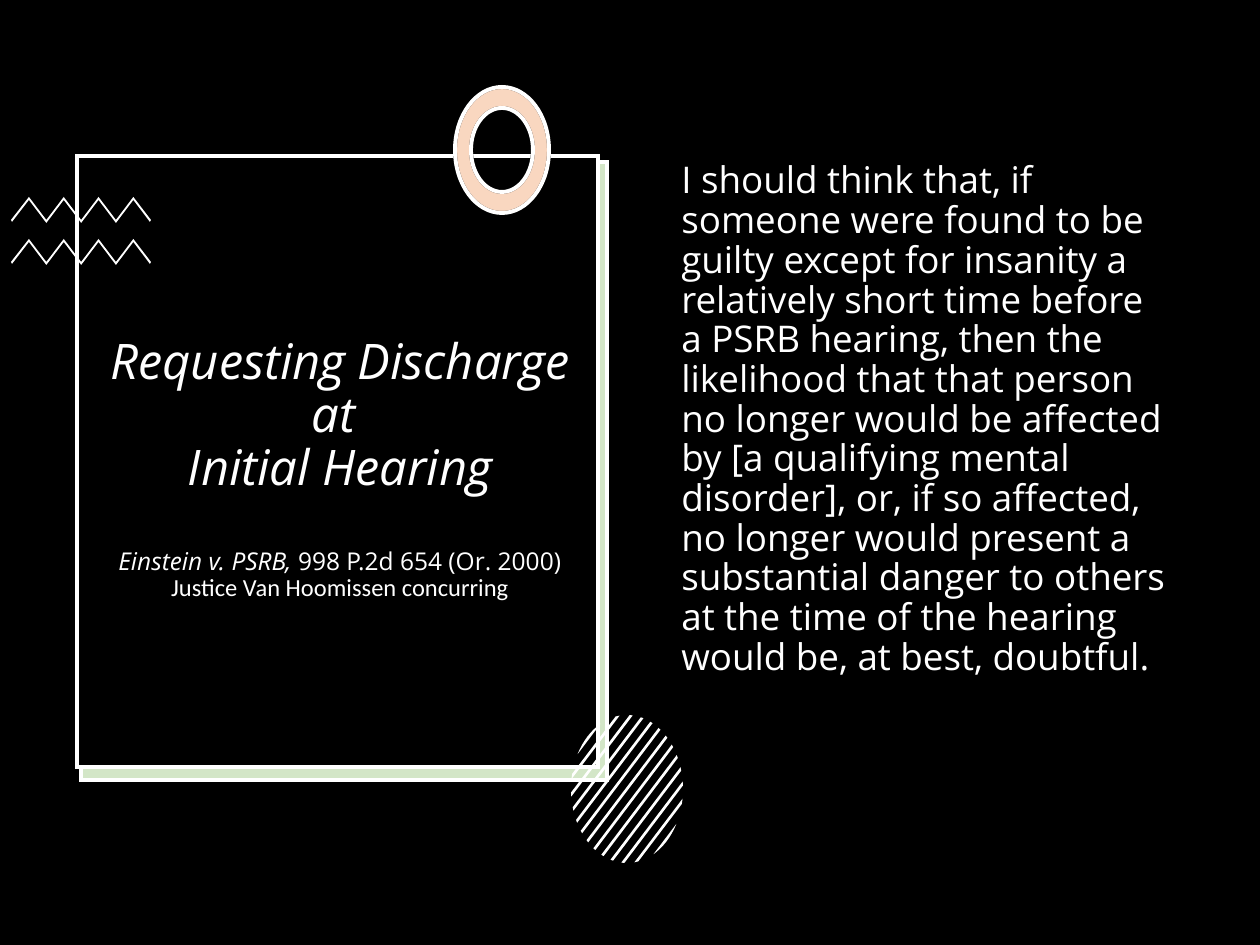
import math
from copy import deepcopy
from dataclasses import dataclass

from lxml import etree
from pptx import Presentation
from pptx.dml.color import RGBColor
from pptx.enum.shapes import MSO_SHAPE
from pptx.enum.text import MSO_ANCHOR, MSO_AUTO_SIZE, PP_ALIGN
from pptx.oxml.ns import qn
from pptx.util import Pt

RECTANGLE = MSO_SHAPE.RECTANGLE
CENTER, LEFT = PP_ALIGN.CENTER, PP_ALIGN.LEFT
MIDDLE, TOP = MSO_ANCHOR.MIDDLE, MSO_ANCHOR.TOP
NO_FIT = MSO_AUTO_SIZE.NONE
TITLE_ONLY = 5
EMU_PER_PX = 914400 / 126


@dataclass(frozen=True)
class Theme:
    black: str = "000000"
    white: str = "FFFFFF"
    green: str = "70AD47"
    orange: str = "ED7D31"
    tint: int = 30
    outline: float = 2.25
    font: str = "Open Sans"
    credit_font: str = "Calibri"
    title_size: int = 28
    citation_size: int = 14
    body_size: int = 21
    line_spacing: float = 0.9


THEME = Theme()

TITLE = (
    ("Requesting Discharge at \nInitial Hearing\n\n", {"italic": True}),
    ("Einstein v. PSRB, ", {"italic": True, "size": THEME.citation_size}),
    ("998 P.2d 654 (Or. 2000)\n", {"size": THEME.citation_size}),
    ("Justice Van Hoomissen concurring",
     {"size": THEME.citation_size, "font": THEME.credit_font}),
)
QUOTE = (
    "I should think that, if someone were found to be guilty except for insanity "
    "a relatively short time before a PSRB hearing, then the likelihood that that "
    "person no longer would be affected by [a qualifying mental disorder], or, if "
    "so affected, no longer would present a substantial danger to others at the "
    "time of the hearing would be, at best, doubtful."
)


def px(value):
    return round(value * EMU_PER_PX)


def paint(shape, fill, line=None, opacity=100):
    shape.shadow.inherit = False
    shape.fill.solid()
    shape.fill.fore_color.rgb = RGBColor.from_string(fill)
    if opacity < 100:
        color = shape.element.spPr.find(qn("a:solidFill"))[0]
        etree.SubElement(color, qn("a:alpha"), val=str(opacity * 1000))
    if line:
        shape.line.color.rgb = RGBColor.from_string(line)
        shape.line.width = Pt(THEME.outline)
        etree.SubElement(shape.element.spPr.find(qn("a:ln")), qn("a:miter"), lim="800000")
    else:
        shape.line.fill.background()


def add_rectangle(slide, box, fill, **style):
    shape = slide.shapes.add_shape(RECTANGLE, *map(px, box))
    paint(shape, fill, **style)


def bend_segments(shape):
    segments = list(shape.element.iter(qn("a:lnTo")))
    for start in range(0, len(segments), 3):
        curve = etree.Element(qn("a:cubicBezTo"))
        segments[start].addprevious(curve)
        for segment in segments[start:start + 3]:
            curve.append(segment[0])
            segment.getparent().remove(segment)


def add_outline(slide, contours, fill, curved=False, **style):
    scaled = [[(px(x), px(y)) for x, y in contour] for contour in contours]
    builder = slide.shapes.build_freeform(*scaled[0][0])
    builder.add_line_segments(scaled[0][1:])
    for contour in scaled[1:]:
        builder.move_to(*contour[0])
        builder.add_line_segments(contour[1:])
    shape = builder.convert_to_shape()
    if curved:
        bend_segments(shape)
    paint(shape, fill, **style)


def add_zigzag(slide, left, top):
    tips = [(left + 18 + 17.4 * i, top + 23 * (i % 2)) for i in range(7)]
    upper = [(left, top + 23), *tips, (left + 140, top + 23)]
    lower = [(x, y + 3) for x, y in reversed(tips)]
    add_outline(slide, [[*upper, (left + 139, top + 25), *lower, (left + 1, top + 25)]],
                THEME.white)


def arc_points(center, radii, start, sweep):
    end, handle = start + sweep, 4 / 3 * math.tan(sweep / 4)
    unit = [
        (math.cos(start), math.sin(start)),
        (math.cos(start) - handle * math.sin(start),
         math.sin(start) + handle * math.cos(start)),
        (math.cos(end) + handle * math.sin(end),
         math.sin(end) - handle * math.cos(end)),
        (math.cos(end), math.sin(end)),
    ]
    return [(center[0] + radii[0] * x, center[1] + radii[1] * y) for x, y in unit]


def ellipse_points(center, radii):
    quarter = math.pi / 2
    arcs = [arc_points(center, radii, i * quarter, quarter) for i in range(4)]
    return arcs[0][:1] + [point for arc in arcs for point in arc[1:]]


def add_ring(slide, center, outer, inner, fill, **style):
    contours = [ellipse_points(center, radii) for radii in (outer, inner)]
    add_outline(slide, contours, fill, curved=True, **style)


def add_striped_ellipse(slide, center, radii, count=13, pitch=0.163, half_width=0.021):
    def on_edge(offset, side):
        reach = side * math.sqrt(1 - offset ** 2)
        return (center[0] + radii[0] * (offset + reach) / math.sqrt(2),
                center[1] + radii[1] * (offset - reach) / math.sqrt(2))

    def add_cap(direction):
        half_sweep = math.acos(count // 2 * pitch - half_width)
        points = arc_points(center, radii, direction - half_sweep, 2 * half_sweep)
        add_outline(slide, [points], THEME.white, curved=True)

    add_cap(math.pi * 5 / 4)
    for index in range(1, count - 1):
        middle = (index - count // 2) * pitch
        low, high = middle - half_width, middle + half_width
        corners = ((low, 1), (high, 1), (high, -1), (low, -1))
        add_outline(slide, [[on_edge(*corner) for corner in corners]], THEME.white)
    add_cap(math.pi / 4)


def add_run(paragraph, text, size, font=THEME.font, italic=False):
    for index, line in enumerate(text.split("\n")):
        if index:
            paragraph.add_line_break()
            line_break = paragraph._p.findall(qn("a:br"))[-1]
            line_break.append(deepcopy(properties))
        run = paragraph.add_run()
        run.text = line
        run.font.name = font
        run.font.size = Pt(size)
        run.font.italic = italic
        run.font.color.rgb = RGBColor.from_string(THEME.white)
        properties = run.font._element
        if not line:
            paragraph._p.remove(run._r)


def write_text(shape, runs, size, align=LEFT, anchor=TOP):
    frame = shape.text_frame
    frame.word_wrap = True
    frame.auto_size = NO_FIT
    frame.vertical_anchor = anchor
    paragraph = frame.paragraphs[0]
    paragraph.alignment = align
    paragraph.line_spacing = THEME.line_spacing
    paragraph.space_before = Pt(0)
    for text, style in runs:
        add_run(paragraph, text, **{"size": size, **style})


def add_title(slide, box, runs, **style):
    title = slide.shapes.title
    title.left, title.top, title.width, title.height = map(px, box)
    slide.shapes.element.append(title.element)
    write_text(title, runs, **style)


def add_text(slide, box, text, **style):
    write_text(slide.shapes.add_textbox(*map(px, box)), [(text, {})], **style)


def main():
    presentation = Presentation()
    presentation.slide_width, presentation.slide_height = px(1260), px(945)
    slide = presentation.slides.add_slide(presentation.slide_layouts[TITLE_ONLY])

    add_rectangle(slide, (0, 0, 1260, 945), THEME.black)
    add_rectangle(slide, (81, 163, 526, 617), THEME.white)
    add_rectangle(slide, (81, 162, 526, 618), THEME.green,
                  line=THEME.white, opacity=THEME.tint)
    add_rectangle(slide, (77, 156, 521, 611), THEME.black, line=THEME.white)

    for top in (197, 239):
        add_zigzag(slide, 11, top)
    ring = {"center": (502, 150), "outer": (47, 63), "inner": (31, 42)}
    add_ring(slide, **ring, fill=THEME.white, line=THEME.black)
    add_ring(slide, **ring, fill=THEME.orange, line=THEME.white, opacity=THEME.tint)
    add_striped_ellipse(slide, (627, 789), (56, 74))

    add_title(slide, (87, 191, 506, 557), TITLE, size=THEME.title_size,
              align=CENTER, anchor=MIDDLE)
    add_text(slide, (669, 156, 514, 600), QUOTE, size=THEME.body_size)
    presentation.save("out.pptx")


if __name__ == "__main__":
    main()
